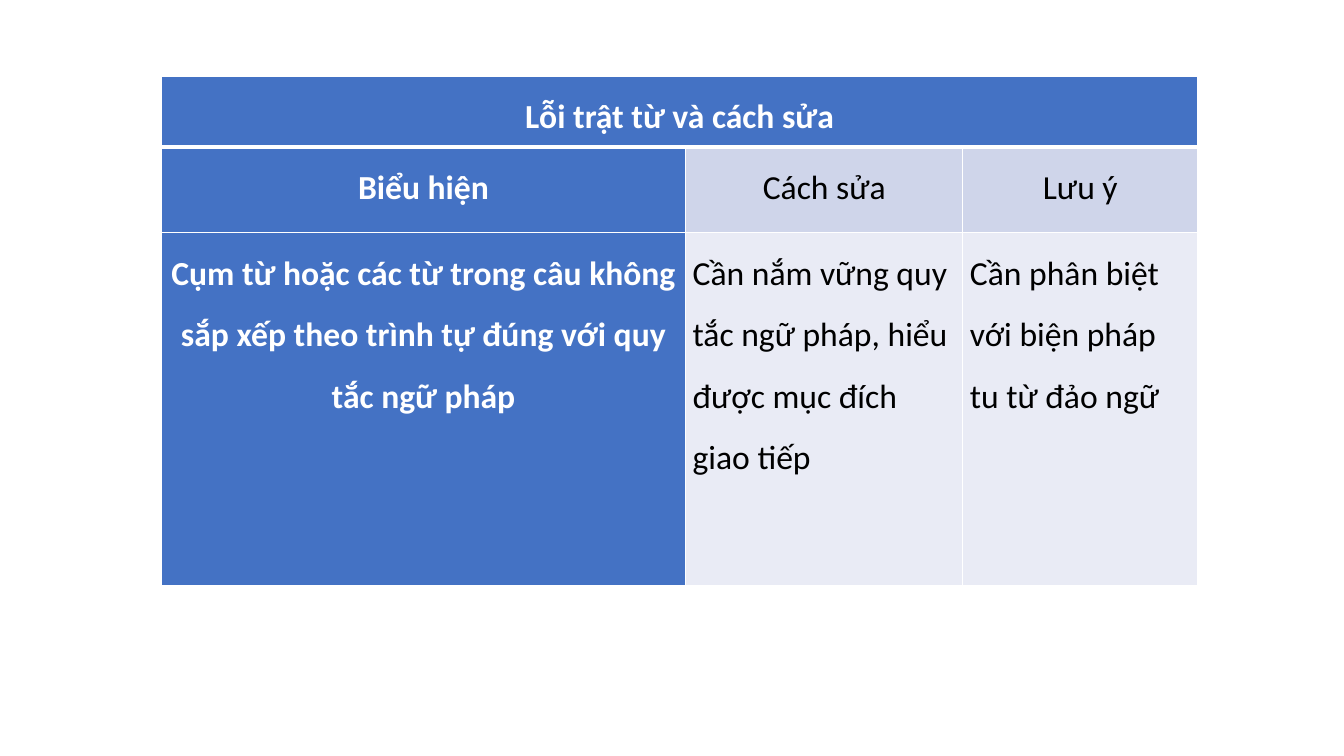
from lxml.etree import SubElement
from pptx import Presentation
from pptx.dml.color import RGBColor
from pptx.enum.text import PP_ALIGN as Align
from pptx.oxml.ns import qn
from pptx.util import Pt

PX = 9144  # 100 px to the inch
COLORS = {
    "header": "4472C4",
    "label": "CFD5EA",
    "body": "E9EBF5",
    "light": "FFFFFF",
    "dark": "000000",
}
TABLE_LEFT, TABLE_TOP = 160, 76
COLUMN_WIDTHS = [520, 275, 233]
ROW_HEIGHTS = [70, 85, 350]
CELL_MARGIN = 7
ROWS = [
    ["Lỗi trật từ và cách sửa"],
    ["Biểu hiện", "Cách sửa", "Lưu ý"],
    [
        "Cụm từ hoặc các từ trong câu không sắp xếp theo trình tự đúng với quy tắc ngữ pháp",
        "Cần nắm vững quy tắc ngữ pháp, hiểu được mục đích giao tiếp",
        "Cần phân biệt với biện pháp tu từ đảo ngữ",
    ],
]
ROW_FILLS = ["header", "label", "body"]


def rgb(name):
    return RGBColor.from_string(COLORS[name])


def set_borders(cell, top=1, bottom=1):
    """Draw light borders; widths are in points and the sides are 1 pt."""
    properties = cell._tc.get_or_add_tcPr()
    for side, width in (("L", 1), ("R", 1), ("T", top), ("B", bottom)):
        line = SubElement(properties, qn(f"a:ln{side}"), w=str(Pt(width)))
        fill = SubElement(line, qn("a:solidFill"))
        SubElement(fill, qn("a:srgbClr"), val=COLORS["light"])


def fill_cell(cell, fill, emphasized):
    cell.fill.solid()
    cell.fill.fore_color.rgb = rgb("header" if emphasized else fill)


def write_cell(cell, text, alignment, emphasized):
    cell.margin_left = cell.margin_right = CELL_MARGIN * PX
    cell.margin_top = cell.margin_bottom = 0
    paragraph = cell.text_frame.paragraphs[0]
    paragraph.text = text
    paragraph.alignment = alignment
    paragraph.line_spacing = 1.5
    font = paragraph.font
    font.name = "Calibri"
    font.size = Pt(24)
    font.bold = emphasized
    font.color.rgb = rgb("light" if emphasized else "dark")


def add_error_table(slide):
    table = slide.shapes.add_table(
        len(ROW_HEIGHTS), len(COLUMN_WIDTHS),
        TABLE_LEFT * PX, TABLE_TOP * PX,
        sum(COLUMN_WIDTHS) * PX, sum(ROW_HEIGHTS) * PX,
    ).table
    table.first_row = table.horz_banding = False
    for column, width in zip(table.columns, COLUMN_WIDTHS):
        column.width = width * PX
    for row, height in zip(table.rows, ROW_HEIGHTS):
        row.height = height * PX

    table.cell(0, 0).merge(table.cell(0, len(COLUMN_WIDTHS) - 1))
    for row_index, texts in enumerate(ROWS):
        for column_index in range(len(COLUMN_WIDTHS)):
            cell = table.cell(row_index, column_index)
            emphasized = row_index == 0 or column_index == 0
            set_borders(cell, top=3 if row_index == 1 else 1,
                        bottom=3 if row_index == 0 else 1)
            fill_cell(cell, ROW_FILLS[row_index], emphasized)
            if column_index < len(texts):
                centered = emphasized or row_index == 1
                write_cell(cell, texts[column_index],
                           Align.CENTER if centered else Align.LEFT, emphasized)


def main():
    presentation = Presentation()
    presentation.slide_width = 1333 * PX
    presentation.slide_height = 750 * PX
    slide = presentation.slides.add_slide(presentation.slide_layouts[6])
    add_error_table(slide)
    presentation.save("out.pptx")


if __name__ == "__main__":
    main()
